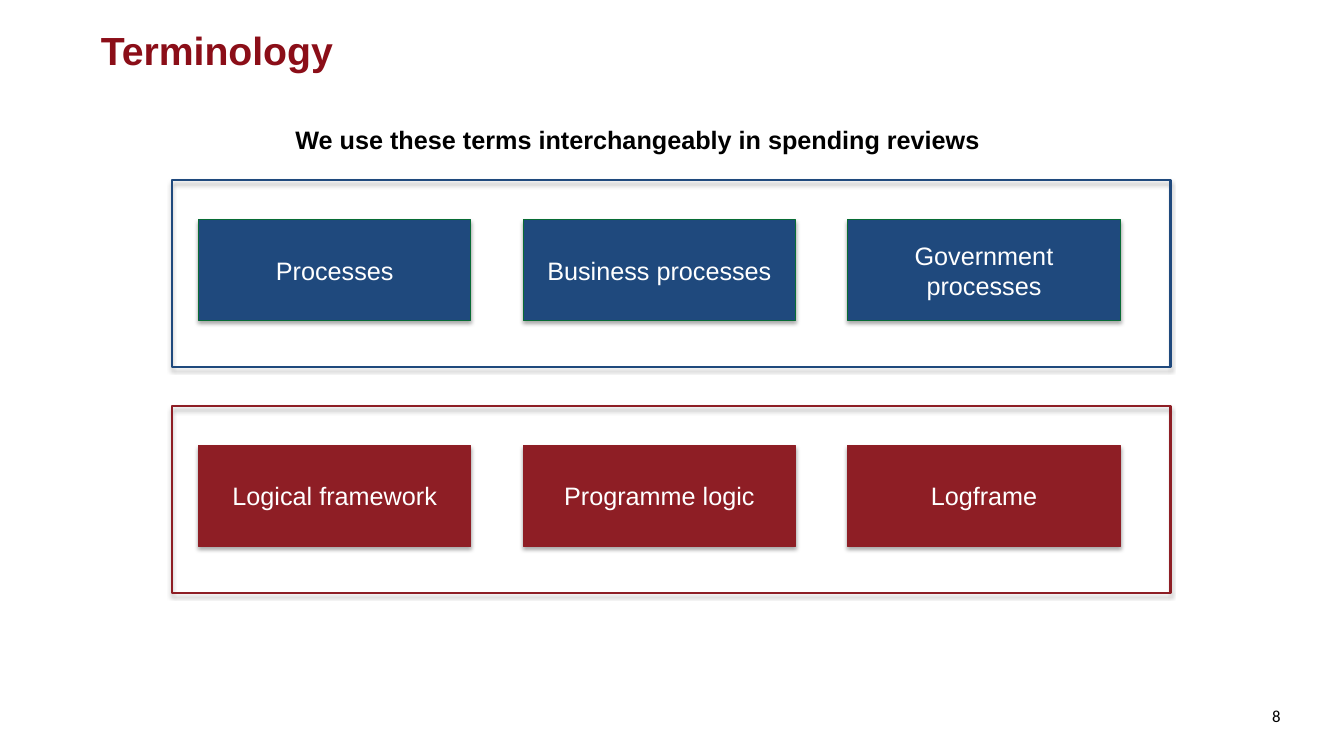
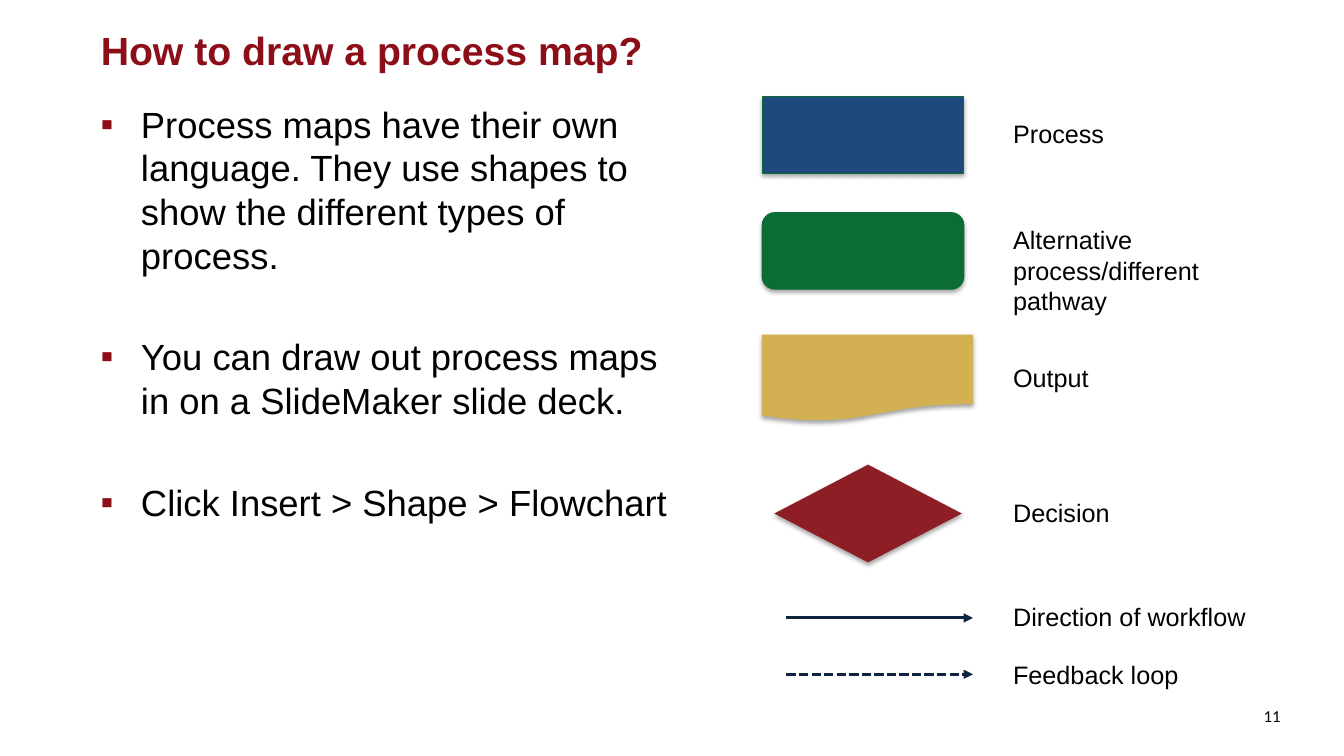
from lxml.etree import SubElement
from pptx import Presentation
from pptx.dml.color import RGBColor
from pptx.enum.dml import MSO_LINE
from pptx.enum.shapes import MSO_CONNECTOR, MSO_SHAPE
from pptx.enum.text import MSO_ANCHOR, PP_ALIGN
from pptx.oxml.ns import qn
from pptx.util import Inches, Pt

# Colours
BLUE = RGBColor(0x1F, 0x49, 0x7D)
RED = RGBColor(0x8E, 0x1E, 0x25)
GREEN = RGBColor(0x0B, 0x6C, 0x36)
GREEN_EDGE = RGBColor(0x08, 0x6C, 0x35)
GOLD = RGBColor(0xD3, 0xB0, 0x52)
NAVY = RGBColor(0x0F, 0x24, 0x3E)
CRIMSON = RGBColor(0x8B, 0x0E, 0x18)
BLACK = RGBColor(0, 0, 0)
WHITE = RGBColor(0xFF, 0xFF, 0xFF)

# Text formats
TITLE = {"name": "Arial", "size": Pt(28), "bold": True, "color": CRIMSON}
NUMBER = {"name": "Calibri", "size": Pt(12), "color": BLACK}
LABEL = {"name": "Arial", "size": Pt(18), "color": BLACK}
HEADING = {**LABEL, "bold": True}
BOX = {**LABEL, "color": WHITE}
BODY = {**LABEL, "size": Pt(26)}

# Content of "Terminology"
HEADING_TEXT = "We use these terms interchangeably in spending reviews"
TERM_GROUPS = [
    (BLUE, GREEN_EDGE, ["Processes", "Business processes", "Government processes"]),
    (RED, RED, ["Logical framework", "Programme logic", "Logframe"]),
]

# Content of "How to draw a process map?"
BULLETS = [
    "Process maps have their own language. They use shapes to show the different types of process.",
    "You can draw out process maps in on a SlideMaker slide deck.",
    "Click Insert > Shape > Flowchart",
]
# Symbol, position (left, top, width, height), fill, edge, label, label top
SYMBOLS = [
    (MSO_SHAPE.FLOWCHART_PROCESS, (7.56, 0.96, 2, 0.76), BLUE, GREEN_EDGE, "Process", 1.12),
    (MSO_SHAPE.FLOWCHART_ALTERNATE_PROCESS, (7.56, 2.11, 2, 0.76), GREEN, GREEN_EDGE,
     "Alternative process/different pathway", 2.18),
    (MSO_SHAPE.FLOWCHART_DOCUMENT, (7.56, 3.32, 2.09, 0.86), GOLD, None, "Output", 3.55),
    (MSO_SHAPE.FLOWCHART_DECISION, (7.68, 4.61, 1.86, 0.97), RED, None, "Decision", 4.88),
]
# Arrow height, dash style, label, label top
ARROWS = [
    (6.13, MSO_LINE.SOLID, "Direction of workflow", 5.92),
    (6.69, MSO_LINE.SQUARE_DOT, "Feedback loop", 6.49),
]


def format_font(font, style):
    for name, value in style.items():
        if name == "color":
            font.color.rgb = value
        else:
            setattr(font, name, value)


def add_text(slide, position, texts, style, align=PP_ALIGN.LEFT):
    """Add a wrapping text box with one paragraph per text."""
    frame = slide.shapes.add_textbox(*map(Inches, position)).text_frame
    frame.word_wrap = True
    frame.text = "\n".join(texts)
    for paragraph in frame.paragraphs:
        paragraph.alignment = align
        format_font(paragraph.runs[0].font, style)
    return frame


def add_shadow(shape):
    shape.shadow.inherit = False
    effects = shape._element.spPr.find(qn("a:effectLst"))
    shadow = SubElement(effects, qn("a:outerShdw"), blurRad="40000", dist="23000",
                        dir="5400000", rotWithShape="0")
    colour = SubElement(shadow, qn("a:srgbClr"), val="000000")
    SubElement(colour, qn("a:alpha"), val="35000")


def add_box(slide, kind, position, fill, edge, edge_width=0.75, text=""):
    shape = slide.shapes.add_shape(kind, *map(Inches, position))
    if fill is None:
        shape.fill.background()
    else:
        shape.fill.solid()
        shape.fill.fore_color.rgb = fill
    if edge is None:
        shape.line.fill.background()
    else:
        shape.line.color.rgb = edge
        shape.line.width = Pt(edge_width)
    add_shadow(shape)
    if text:
        frame = shape.text_frame
        frame.text = text
        frame.word_wrap = True
        frame.vertical_anchor = MSO_ANCHOR.MIDDLE
        frame.paragraphs[0].alignment = PP_ALIGN.CENTER
        format_font(frame.paragraphs[0].runs[0].font, BOX)


def add_arrow(slide, top, dash):
    arrow = slide.shapes.add_connector(
        MSO_CONNECTOR.STRAIGHT, Inches(7.8), Inches(top), Inches(9.65), Inches(top))
    arrow.line.color.rgb = NAVY
    arrow.line.width = Pt(2.25)
    arrow.line.dash_style = dash
    SubElement(arrow.line._get_or_add_ln(), qn("a:tailEnd"), type="triangle")
    SubElement(arrow._element.spPr, qn("a:effectLst"))


def add_bullet(paragraph):
    properties = paragraph._p.get_or_add_pPr()
    properties.set("marL", str(Inches(0.4)))
    properties.set("indent", str(-Inches(0.4)))
    colour = SubElement(properties, qn("a:buClr"))
    SubElement(colour, qn("a:srgbClr"), val=str(CRIMSON))
    SubElement(properties, qn("a:buFont"), typeface="Arial")
    SubElement(properties, qn("a:buChar"), char="▪")


def add_slide(presentation, title_text, number):
    """Add a slide with the shared title style and page number."""
    slide = presentation.slides.add_slide(presentation.slide_layouts[5])
    title = slide.shapes.title
    title.left, title.top, title.width, title.height = map(Inches, (0.9, 0.27, 11.51, 0.45))
    frame = title.text_frame
    frame.text = title_text
    frame.vertical_anchor = MSO_ANCHOR.MIDDLE
    frame.paragraphs[0].alignment = PP_ALIGN.LEFT
    format_font(frame.paragraphs[0].runs[0].font, TITLE)
    add_text(slide, (12.04, 6.95, 0.76, 0.39), [number], NUMBER, PP_ALIGN.RIGHT)
    return slide


def build_terminology(presentation):
    slide = add_slide(presentation, "Terminology", "8")
    add_text(slide, (1.06, 1.18, 10.53, 0.4), [HEADING_TEXT], HEADING, PP_ALIGN.CENTER)
    for row, (fill, edge, terms) in enumerate(TERM_GROUPS):
        top = 1.79 + row * 2.24
        for column, term in enumerate(terms):
            position = (1.97 + column * 3.22, top + 0.39, 2.7, 1)
            add_box(slide, MSO_SHAPE.RECTANGLE, position, fill, edge, text=term)
        add_box(slide, MSO_SHAPE.RECTANGLE, (1.71, top, 9.9, 1.85), None, fill, 1.5)


def build_process_map(presentation):
    slide = add_slide(presentation, "How to draw a process map?", "11")
    body = add_text(slide, (0.9, 0.96, 5.91, 5.76), BULLETS, BODY)
    for index, paragraph in enumerate(body.paragraphs):
        add_bullet(paragraph)
        paragraph.space_before = Pt(41.6 if index else 0)

    # Legend of symbols and arrows
    labels = []
    for kind, position, fill, edge, label, label_top in SYMBOLS:
        add_box(slide, kind, position, fill, edge)
        labels.append((label, label_top))
    for top, dash, label, label_top in ARROWS:
        add_arrow(slide, top, dash)
        labels.append((label, label_top))
    for label, label_top in labels:
        add_text(slide, (9.95, label_top, 2.64, 0.4), [label], LABEL)


def main():
    presentation = Presentation()
    presentation.slide_width = Inches(13.33)
    presentation.slide_height = Inches(7.5)
    build_terminology(presentation)
    build_process_map(presentation)
    presentation.save("out.pptx")


if __name__ == "__main__":
    main()
